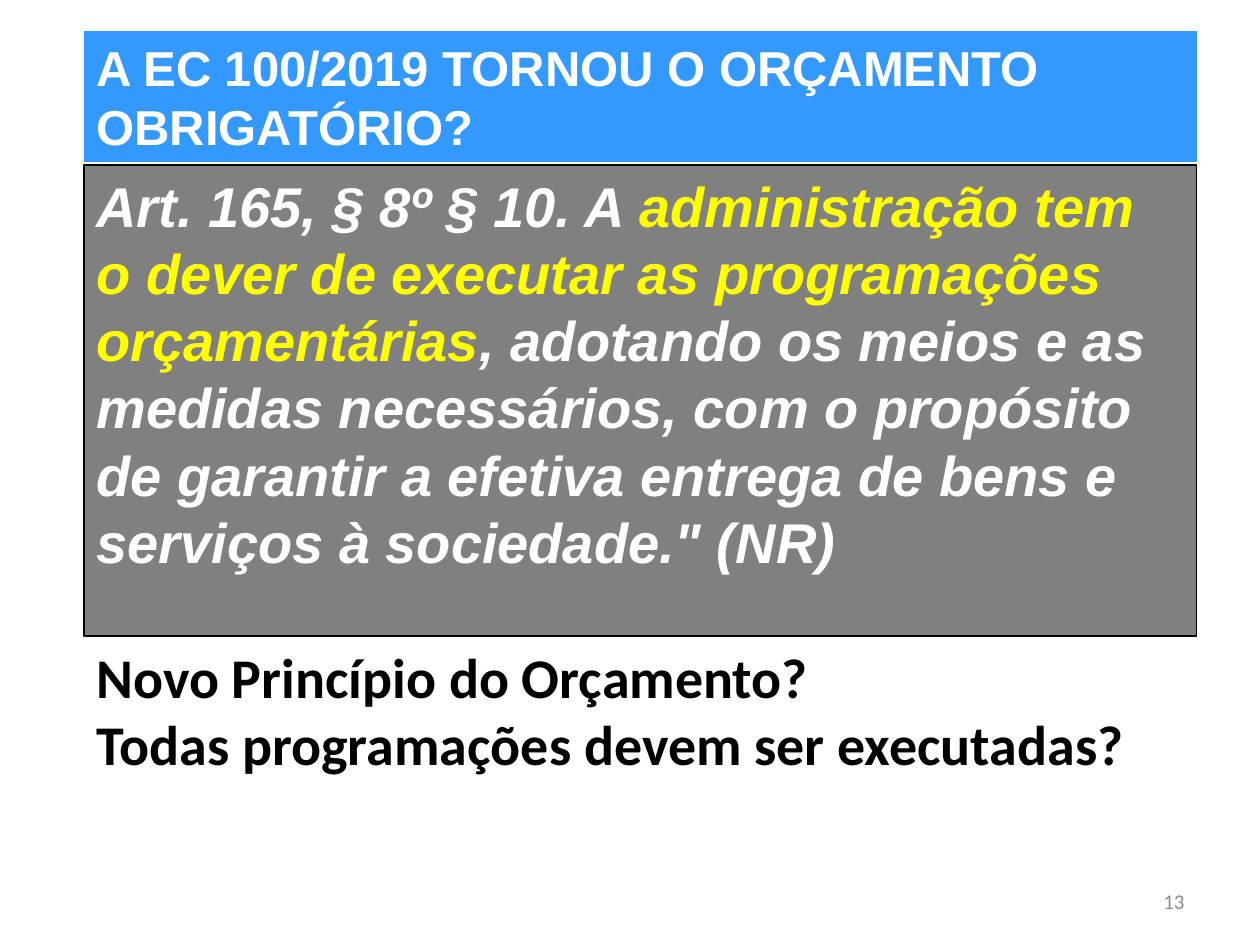
from pptx import Presentation
from pptx.dml.color import RGBColor
from pptx.enum.shapes import MSO_SHAPE as SHAPE
from pptx.enum.text import MSO_ANCHOR as ANCHOR, PP_ALIGN as ALIGN
from pptx.util import Pt

PX = 914400 // 126
LEFT, WIDTH = 84, 1113
COLORS = {
    "banner": "3399FF",
    "quote": "808080",
    "white": "FFFFFF",
    "highlight": "FFFF00",
    "black": "000000",
    "number": "8C8C8C",
}
TITLE = {"name": "Arial", "size": Pt(28), "bold": True}
QUOTE = {"name": "Arial", "size": Pt(32), "bold": True, "italic": True}
QUESTION = {"name": "Calibri", "size": Pt(32), "bold": True}
NUMBER = {"name": "Calibri", "size": Pt(12)}


def rgb(name):
    return RGBColor.from_string(COLORS[name])


def write(sp, paragraphs, fmt, align=ALIGN.LEFT, anchor=ANCHOR.TOP):
    tf = sp.text_frame
    tf.word_wrap = True
    tf.vertical_anchor = anchor
    for i, runs in enumerate(paragraphs):
        p = tf.paragraphs[0] if i == 0 else tf.add_paragraph()
        p.alignment = align
        for text, color in runs:
            r = p.add_run()
            r.text = text
            for key, value in fmt.items():
                setattr(r.font, key, value)
            r.font.color.rgb = rgb(color)


def add_panel(s, box, fill, line=None):
    sp = s.shapes.add_shape(SHAPE.RECTANGLE, *(v * PX for v in box))
    sp.shadow.inherit = False
    sp.fill.solid()
    sp.fill.fore_color.rgb = rgb(fill)
    if line:
        sp.line.color.rgb = rgb(line)
        sp.line.width = Pt(0.75)
    else:
        sp.line.fill.background()
    return sp


def add_text(s, box):
    return s.shapes.add_textbox(*(v * PX for v in box))


def main():
    prs = Presentation()
    prs.slide_width, prs.slide_height = 1260 * PX, 945 * PX
    s = prs.slides.add_slide(prs.slide_layouts[6])

    number = add_text(s, (903, 876, 294, 50))
    write(number, [[("13", "number")]], NUMBER, ALIGN.RIGHT, ANCHOR.MIDDLE)

    quote = add_panel(s, (LEFT, 165, WIDTH, 471), "quote", "black")
    write(quote, [[
        ("Art. 165, § 8º § 10. A ", "white"),
        ("administração tem o dever de executar as programações orçamentárias", "highlight"),
        (", adotando os meios e as medidas necessários, com o propósito de garantir "
         "a efetiva entrega de bens e serviços à sociedade.\" (NR)", "white"),
    ]], QUOTE)

    banner = add_panel(s, (LEFT, 31, WIDTH, 131), "banner")
    write(banner, [[("A EC 100/2019 TORNOU O ORÇAMENTO OBRIGATÓRIO?", "white")]], TITLE)

    questions = add_text(s, (LEFT, 636, WIDTH, 149))
    write(questions, [
        [("Novo Princípio do Orçamento?", "black")],
        [("Todas programações devem ser executadas?", "black")],
    ], QUESTION)

    prs.save("out.pptx")


if __name__ == "__main__":
    main()
